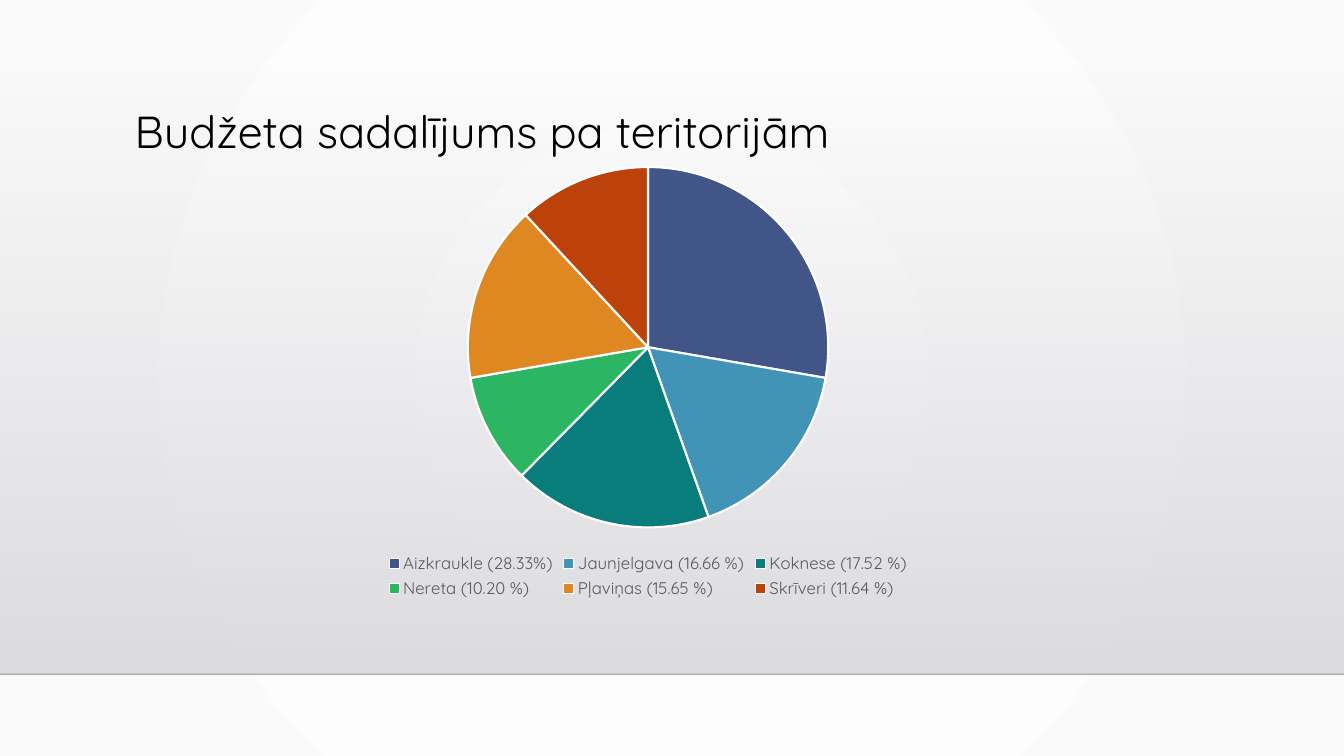
import lxml.etree
import pptx
import pptx.chart.data
import pptx.dml.color
import pptx.enum.chart
import pptx.enum.shapes
import pptx.enum.text
import pptx.oxml.ns
import pptx.util

Pt = pptx.util.Pt
qn = pptx.oxml.ns.qn

FONT = "Quicksand"
COLORS = {
    "center": "FFFFFF",
    "edge": "FAFAFA",
    "panel_top": "DCDCE0",
    "panel_bottom": "DEDEE2",
    "rule": "000001",
    "title": "000000",
    "legend": "595959",
    "slice_border": "FFFFFF",
}
TERRITORIES = [
    ("Aizkraukle (28.33%)", 28, "415588"),
    ("Jaunjelgava (16.66 %)", 17, "4294B6"),
    ("Koknese (17.52 %)", 18, "087D7C"),
    ("Nereta (10.20 %)", 10, "2CB663"),
    ("Pļaviņas (15.65 %)", 16, "DF8822"),
    ("Skrīveri (11.64 %)", 12, "BC410A"),
]


def rgb(value):
    return pptx.dml.color.RGBColor.from_string(value)


def set_alpha(parent, percent):
    """Set the opacity of the first RGB colour below parent."""
    color = parent.find(".//" + qn("a:srgbClr"))
    lxml.etree.SubElement(color, qn("a:alpha"), val=str(percent * 1000))


class SlideBuilder:
    def __init__(self, deck, font):
        self.font = font
        self.slide = deck.slides.add_slide(deck.slide_layouts[5])

    def gradient(self, fill, first, last):
        fill.gradient()
        for stop, name, position in zip(fill.gradient_stops, (first, last), (0, 1)):
            stop.color.rgb = rgb(COLORS[name])
            stop.position = position

    def background(self):
        """Fill the background with a gradient spreading from the centre."""
        self.gradient(self.slide.background.fill, "center", "edge")
        gradient = self.slide.element.find(".//" + qn("a:gradFill"))
        gradient.remove(gradient.find(qn("a:lin")))
        circle = lxml.etree.SubElement(gradient, qn("a:path"), path="circle")
        sides = dict.fromkeys("ltrb", "50000")
        lxml.etree.SubElement(circle, qn("a:fillToRect"), **sides)

    def panel(self, left, top, width, height):
        """Add a rectangle that fades in from top to bottom."""
        panel = self.slide.shapes.add_shape(
            pptx.enum.shapes.MSO_SHAPE.RECTANGLE,
            Pt(left), Pt(top), Pt(width), Pt(height))
        panel.shadow.inherit = False
        panel.line.fill.background()
        self.gradient(panel.fill, "panel_top", "panel_bottom")
        panel.fill.gradient_angle = 270
        set_alpha(panel.element, 0)

    def rule(self, left, right, y):
        rule = self.slide.shapes.add_connector(
            pptx.enum.shapes.MSO_CONNECTOR.STRAIGHT,
            Pt(left), Pt(y), Pt(right), Pt(y))
        rule.line.width = Pt(1)
        rule.line.color.rgb = rgb(COLORS["rule"])
        properties = rule.element.spPr
        set_alpha(properties, 20)
        lxml.etree.SubElement(properties, qn("a:effectLst"))

    def title(self, text, left, top, width, height):
        box = self.slide.shapes.title
        self.slide.shapes.element.append(box.element)
        box.left, box.top, box.width, box.height = map(Pt, (left, top, width, height))
        frame = box.text_frame
        frame.text = text
        frame.word_wrap = True
        frame.auto_size = pptx.enum.text.MSO_AUTO_SIZE.NONE
        frame.vertical_anchor = pptx.enum.text.MSO_ANCHOR.TOP
        para = frame.paragraphs[0]
        para.alignment = pptx.enum.text.PP_ALIGN.LEFT
        para.line_spacing = 0.9
        self.style(para.font, 32, "title")

    def style(self, font, size, color):
        font.name = self.font
        font.size = Pt(size)
        font.color.rgb = rgb(COLORS[color])

    def pie(self, rows, left, top, width, height):
        names, values, colors = zip(*rows)
        data = pptx.chart.data.CategoryChartData()
        data.categories = names
        data.add_series("Series 1", values)
        chart = self.slide.shapes.add_chart(
            pptx.enum.chart.XL_CHART_TYPE.PIE,
            Pt(left), Pt(top), Pt(width), Pt(height), data).chart
        self.style(chart.font, 10, "title")
        chart.has_title = False
        chart.has_legend = True
        chart.legend.position = pptx.enum.chart.XL_LEGEND_POSITION.BOTTOM
        chart.legend.include_in_layout = False
        self.style(chart.legend.font, 12, "legend")
        plot = chart.plots[0]
        plot.vary_by_categories = True
        for index, color in enumerate(colors):
            piece = plot.series[0].points[index].format
            piece.fill.solid()
            piece.fill.fore_color.rgb = rgb(color)
            piece.line.width = Pt(1.5)
            piece.line.color.rgb = rgb(COLORS["slice_border"])


def main():
    deck = pptx.Presentation()
    deck.slide_width, deck.slide_height = Pt(960), Pt(540)
    page = SlideBuilder(deck, FONT)
    page.background()
    page.panel(0, 36.7, 960, 445)
    page.rule(0, 960, 481.7)
    page.title("Budžeta sadalījums pa teritorijām", 89, 74.9, 756, 82.8)
    page.pie(TERRITORIES, 55, 109.4, 815.8, 321.1)
    deck.save("out.pptx")


if __name__ == "__main__":
    main()
